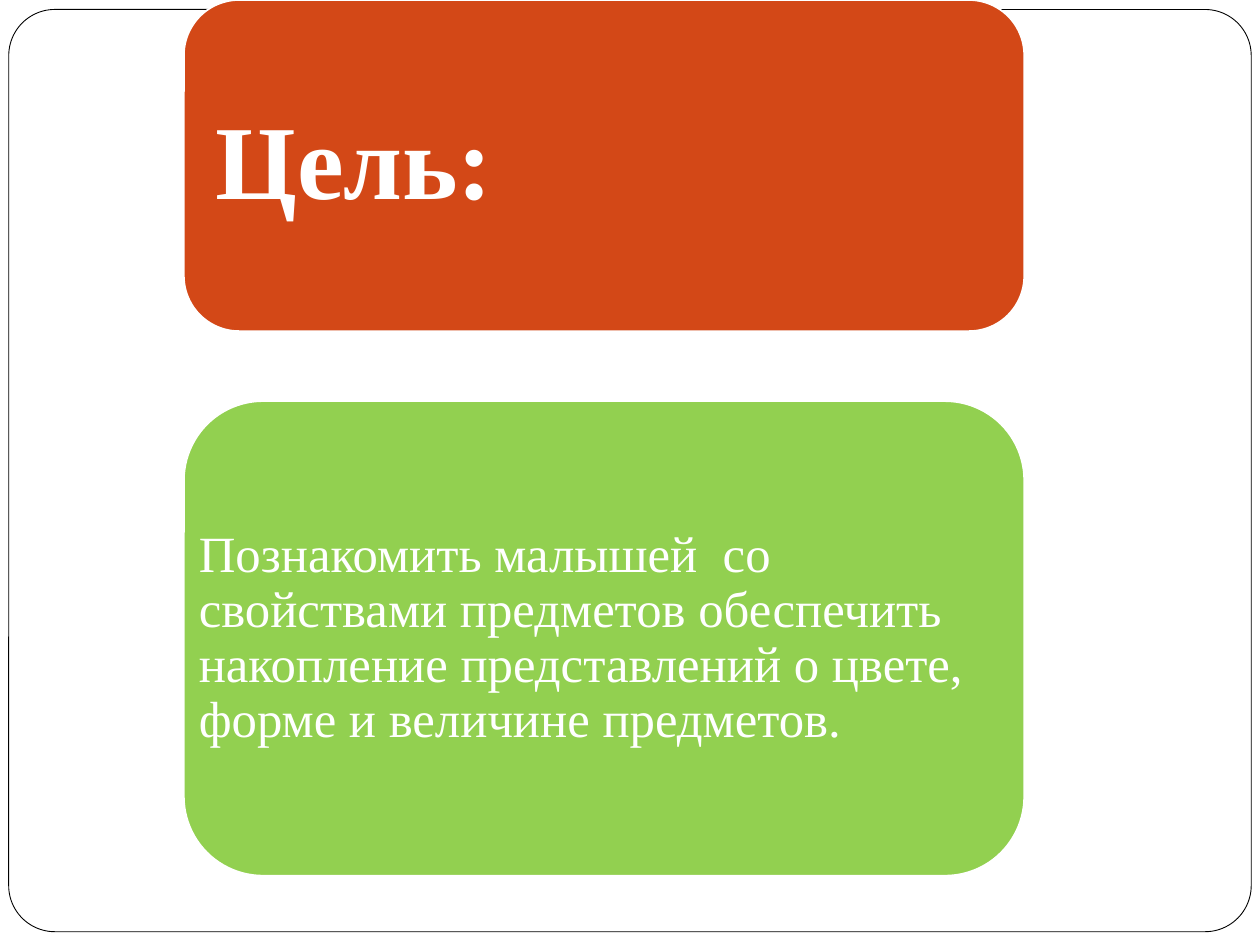
from dataclasses import dataclass

from lxml import etree
from pptx import Presentation
from pptx.dml.color import RGBColor
from pptx.enum.shapes import MSO_SHAPE
from pptx.enum.text import MSO_ANCHOR, MSO_AUTO_SIZE, PP_ALIGN
from pptx.oxml.ns import qn
from pptx.shapes.placeholder import SlidePlaceholder
from pptx.slide import Slide
from pptx.util import Pt

ROUNDED = MSO_SHAPE.ROUNDED_RECTANGLE
MIDDLE = MSO_ANCHOR.MIDDLE
NO_AUTOFIT = MSO_AUTO_SIZE.NONE
LEFT = PP_ALIGN.LEFT


@dataclass(frozen=True)
class Theme:
    font: str = "Times New Roman"
    white: RGBColor = RGBColor(0xFF, 0xFF, 0xFF)
    black: RGBColor = RGBColor(0, 0, 0)
    orange: RGBColor = RGBColor(0xD3, 0x48, 0x17)
    green: RGBColor = RGBColor(0x92, 0xD0, 0x50)
    title_size: float = 60
    body_size: float = 29


@dataclass(frozen=True)
class Box:
    left: float
    top: float
    width: float
    height: float
    fill: RGBColor
    line: RGBColor
    line_width: float = 1
    rounding: float = 0.1667


@dataclass(frozen=True)
class Panel:
    box: Box
    text: str
    size: float
    inset: float
    bold: bool = False


THEME = Theme()
PANEL_LEFT = 105.1
PANEL_WIDTH = 480.2

FRAME = Box(5, 5.4, 710, 527, THEME.white, THEME.black, 0.5, 0.05)
GOAL = Panel(
    Box(PANEL_LEFT, 0, PANEL_WIDTH, 189.2, THEME.orange, THEME.white),
    "Цель:",
    THEME.title_size,
    18,
    True,
)
DESCRIPTION = Panel(
    Box(PANEL_LEFT, 229.2, PANEL_WIDTH, 271.2, THEME.green, THEME.white),
    "Познакомить малышей  со свойствами предметов обеспечить "
    "накопление представлений о цвете, форме и величине предметов.",
    THEME.body_size,
    8.5,
)


def draw_box(slide: Slide, box: Box) -> None:
    shape = slide.shapes.add_shape(
        ROUNDED, Pt(box.left), Pt(box.top), Pt(box.width), Pt(box.height)
    )
    shape.adjustments[0] = box.rounding
    shape.shadow.inherit = False
    shape.fill.solid()
    shape.fill.fore_color.rgb = box.fill
    shape.line.color.rgb = box.line
    shape.line.width = Pt(box.line_width)


def draw_panel(slide: Slide, panel: Panel, placeholder: SlidePlaceholder) -> None:
    box = panel.box
    draw_box(slide, box)
    slide.shapes._spTree.append(placeholder._element)
    placeholder.left, placeholder.top = Pt(box.left), Pt(box.top)
    placeholder.width, placeholder.height = Pt(box.width), Pt(box.height)

    frame = placeholder.text_frame
    frame.text = panel.text
    frame.word_wrap = True
    frame.auto_size = NO_AUTOFIT
    frame.vertical_anchor = MIDDLE
    frame.margin_left = frame.margin_right = Pt(panel.inset)
    frame.margin_top = frame.margin_bottom = Pt(panel.inset)

    paragraph = frame.paragraphs[0]
    paragraph.alignment = LEFT
    paragraph.line_spacing = 0.9
    paragraph.space_before = Pt(0)
    paragraph.font.name = THEME.font
    paragraph.font.size = Pt(panel.size)
    paragraph.font.bold = panel.bold
    paragraph.font.color.rgb = THEME.white
    properties = paragraph._p.get_or_add_pPr()
    properties.set("marL", "0")
    properties.set("indent", "0")
    bullet = etree.Element(qn("a:buNone"))
    properties.find(qn("a:defRPr")).addprevious(bullet)


def main() -> None:
    presentation = Presentation()
    presentation.slide_width, presentation.slide_height = Pt(720), Pt(540)
    slide = presentation.slides.add_slide(presentation.slide_layouts[1])
    title, body = slide.placeholders
    draw_box(slide, FRAME)
    draw_panel(slide, GOAL, title)
    draw_panel(slide, DESCRIPTION, body)
    presentation.save("out.pptx")


if __name__ == "__main__":
    main()
